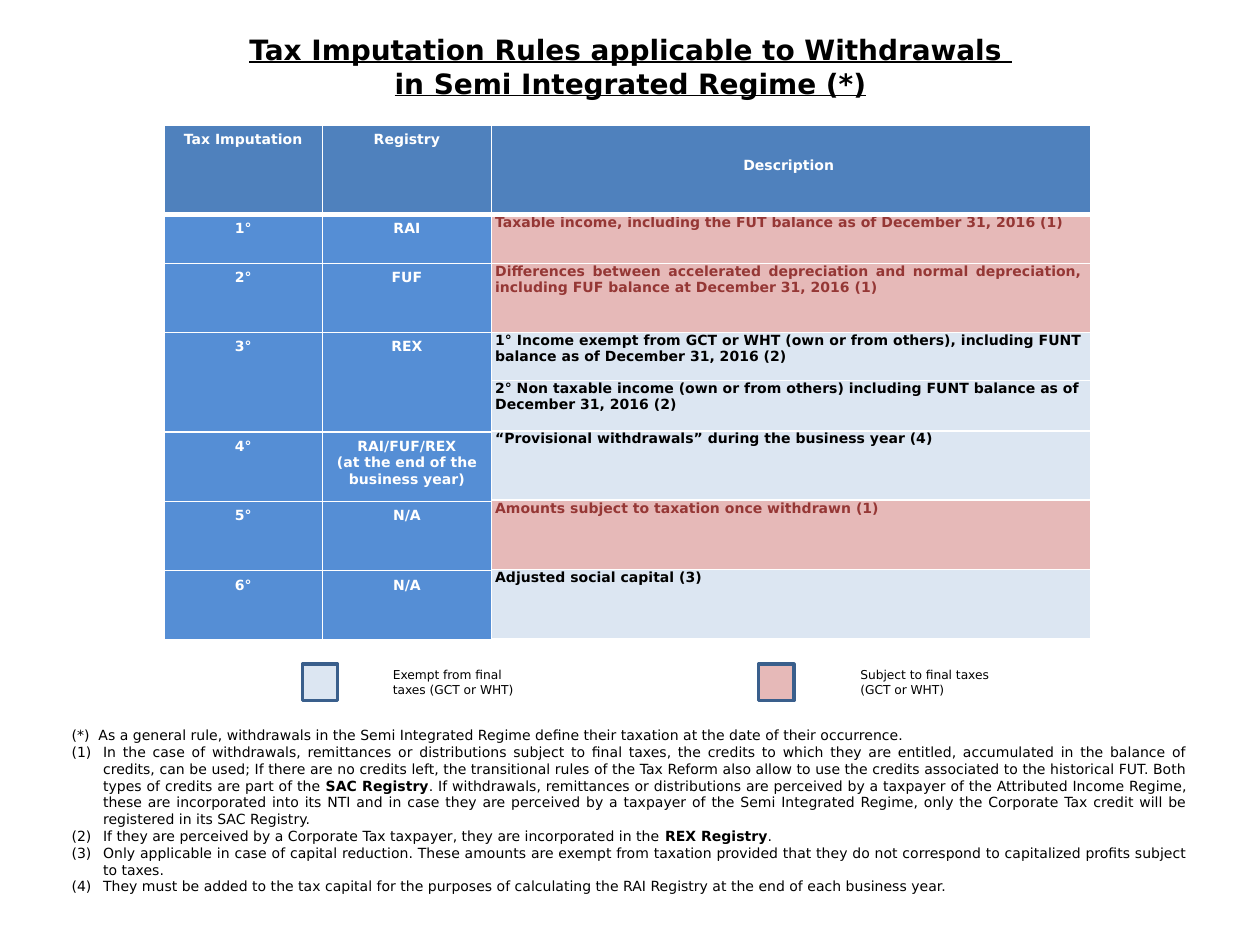
import pptx
import pptx.dml.color
import pptx.enum.shapes
import pptx.enum.text
import pptx.oxml
import pptx.oxml.ns
import pptx.util
from lxml import etree

Inches, Pt = pptx.util.Inches, pptx.util.Pt
RGBColor = pptx.dml.color.RGBColor
ALIGN = pptx.enum.text.PP_ALIGN
qn = pptx.oxml.ns.qn

FONT = "DejaVu Sans"
BLACK = RGBColor(0x00, 0x00, 0x00)
WHITE = RGBColor(0xFF, 0xFF, 0xFF)
HEADER_BLUE = RGBColor(0x4F, 0x81, 0xBD)
ROW_BLUE = RGBColor(0x55, 0x8E, 0xD5)
EXEMPT_BLUE = RGBColor(0xDC, 0xE6, 0xF2)
TAXED_PINK = RGBColor(0xE6, 0xB9, 0xB8)
TAXED_RED = RGBColor(0x95, 0x37, 0x35)
OUTLINE = RGBColor(0x3A, 0x5F, 0x8C)

TITLE = ["Tax Imputation Rules applicable to Withdrawals ", "in Semi Integrated Regime (*)"]

IMPUTATION = ["Tax Imputation", "1°", "2°", "3°", "4°", "5°", "6°"]
REGISTRY = ["Registry", "RAI", "FUF", "REX",
            ["RAI/FUF/REX", "(at the end of the business year)"], "N/A", "N/A"]
# text, subject to final taxes, alignment
DESCRIPTIONS = [
    ("Taxable income, including the FUT balance as of December 31, 2016 (1)", True, ALIGN.LEFT),
    ("Differences between accelerated depreciation and normal depreciation, "
     "including FUF balance at December 31, 2016 (1)", True, ALIGN.JUSTIFY),
    ("1° Income exempt from GCT or WHT (own or from others), "
     "including FUNT balance as of December 31, 2016 (2)", False, ALIGN.JUSTIFY),
    ("2° Non taxable income (own or from others) including FUNT balance "
     "as of December 31, 2016 (2)", False, ALIGN.LEFT),
    ("“Provisional withdrawals” during the business year (4)", False, ALIGN.LEFT),
    ("Amounts subject to taxation once withdrawn (1)", True, ALIGN.LEFT),
    ("Adjusted social capital (3)", False, ALIGN.LEFT),
]
LEGEND = [
    (2.4, 3.02, "Exempt from final taxes (GCT or WHT)", EXEMPT_BLUE),
    (6.02, 6.73, "Subject to final taxes (GCT or WHT)", TAXED_PINK),
]
# Each note is a list of runs; a tuple marks a bold run
GENERAL_NOTE = ["(*)  As a general rule, withdrawals in the Semi Integrated Regime define "
                "their taxation at the date of their occurrence. "]
NUMBERED_NOTES = [
    ["In the case of withdrawals, remittances or distributions subject to final taxes, the "
     "credits to which they are entitled, accumulated in the balance of credits, can be used; "
     "If there are no credits left, the transitional rules of the Tax Reform also allow to use "
     "the credits associated to the historical FUT. Both types of credits are part of the ",
     ("SAC Registry",),
     ". If withdrawals, remittances or distributions are perceived by a taxpayer of the "
     "Attributed Income Regime, these are incorporated into its NTI and in case they are "
     "perceived by a taxpayer of the Semi Integrated Regime, only the Corporate Tax credit "
     "will be registered in its SAC Registry."],
    ["If they are perceived by a Corporate Tax taxpayer, they are incorporated in the ",
     ("REX Registry",), ". "],
    ["Only applicable in case of capital reduction. These amounts are exempt from taxation "
     "provided that they do not correspond to capitalized profits subject to taxes. "],
    ["They must be added to the tax capital for the purposes of calculating the RAI Registry "
     "at the end of each business year. "],
]

TABLE_TOP = 0.99
HEADER_H, FIRST_H, ROW_H = 0.71, 0.39, 0.55
REX_SPLIT = [0.38, 0.4]
ROWS = [HEADER_H, FIRST_H, ROW_H, sum(REX_SPLIT) + 0.01] + [ROW_H] * 3
DESCRIPTION_ROWS = ROWS[:3] + REX_SPLIT + ROWS[4:]


def write(frame, paragraphs, size=8, color=BLACK, bold=False, underline=False,
          align=ALIGN.LEFT, numbered_from=None):
    """Fill a text frame; paragraphs are strings or lists of runs, a tuple being a bold run."""
    for i, content in enumerate(paragraphs):
        paragraph = frame.paragraphs[0] if i == 0 else frame.add_paragraph()
        paragraph.alignment = align
        if numbered_from is not None and i >= numbered_from:
            properties = paragraph._p.get_or_add_pPr()
            properties.set("marL", str(Inches(0.25)))
            properties.set("indent", str(-Inches(0.25)))
            etree.SubElement(properties, qn("a:buFont"), typeface="+mj-lt")
            etree.SubElement(properties, qn("a:buAutoNum"), type="arabicParenBoth")
        for part in [content] if isinstance(content, str) else content:
            strong = isinstance(part, tuple)
            run = paragraph.add_run()
            run.text = part[0] if strong else part
            run.font.name, run.font.size = FONT, Pt(size)
            run.font.bold, run.font.underline = bold or strong, underline
            run.font.color.rgb = color


def add_text(slide, box, paragraphs, wrap=True, **text_format):
    frame = slide.shapes.add_textbox(*map(Inches, box)).text_frame
    frame.word_wrap = wrap
    write(frame, paragraphs, **text_format)


def set_borders(cell, **widths):
    properties = cell._tc.get_or_add_tcPr()
    for side in "LRTB":
        line = etree.SubElement(properties, qn(f"a:ln{side}"), w=str(Pt(widths.get(side, 1))))
        fill = etree.SubElement(line, qn("a:solidFill"))
        etree.SubElement(fill, qn("a:srgbClr"), val=str(WHITE))


def add_column(slide, left, width, heights, entries, insets=None):
    """Add a one-column table; entries are (paragraphs, fill, text format)."""
    table = slide.shapes.add_table(len(heights), 1, Inches(left), Inches(TABLE_TOP),
                                   Inches(width), Inches(sum(heights))).table
    for i, (height, (paragraphs, fill, text_format)) in enumerate(zip(heights, entries)):
        table.rows[i].height = Inches(height)
        cell = table.cell(i, 0)
        set_borders(cell, T=3 if i == 1 else 1, B=3 if i == 0 else 1)
        cell.fill.solid()
        cell.fill.fore_color.rgb = fill
        if insets:
            cell.margin_left = cell.margin_right = Inches(insets[0])
            cell.margin_top = cell.margin_bottom = Inches(insets[1])
        write(cell.text_frame, paragraphs, bold=True, **text_format)
    return table


def label_entries(labels):
    centred = {"color": WHITE, "align": ALIGN.CENTER}
    return [([label] if isinstance(label, str) else label,
             ROW_BLUE if i else HEADER_BLUE, centred) for i, label in enumerate(labels)]


def main():
    deck = pptx.Presentation()
    deck.slide_width, deck.slide_height = Inches(10), Inches(7.5)
    slide = deck.slides.add_slide(deck.slide_layouts[6])

    add_text(slide, (0.47, 5.72, 9.06, 1.45), [GENERAL_NOTE] + NUMBERED_NOTES,
             align=ALIGN.JUSTIFY, numbered_from=1)

    add_column(slide, 1.3, 1.26, ROWS, label_entries(IMPUTATION))
    descriptions = label_entries(["Description"]) + [
        ([text], TAXED_PINK if taxed else EXEMPT_BLUE,
         {"color": TAXED_RED if taxed else BLACK, "align": align})
        for text, taxed, align in DESCRIPTIONS]
    description_table = add_column(slide, 3.86, 4.8, DESCRIPTION_ROWS, descriptions,
                                   insets=(0.07, 0))
    description_table.cell(0, 0).margin_top = Inches(0.26)
    add_column(slide, 2.56, 1.34, ROWS, label_entries(REGISTRY))

    add_text(slide, (1.82, 0.21, 6.37, 0.64), TITLE, wrap=False, size=16, bold=True,
             underline=True, align=ALIGN.CENTER)

    for swatch_left, label_left, label, color in LEGEND:
        swatch = slide.shapes.add_shape(
            pptx.enum.shapes.MSO_SHAPE.RECTANGLE,
            Inches(swatch_left), Inches(5.27), Inches(0.28), Inches(0.29))
        swatch.shadow.inherit = False
        swatch.fill.solid()
        swatch.fill.fore_color.rgb = color
        swatch.line.color.rgb = OUTLINE
        swatch.line.width = Pt(2)
        add_text(slide, (label_left, 5.25, 1.29, 0.34), [label], size=7)

    deck.save("out.pptx")


if __name__ == "__main__":
    main()
